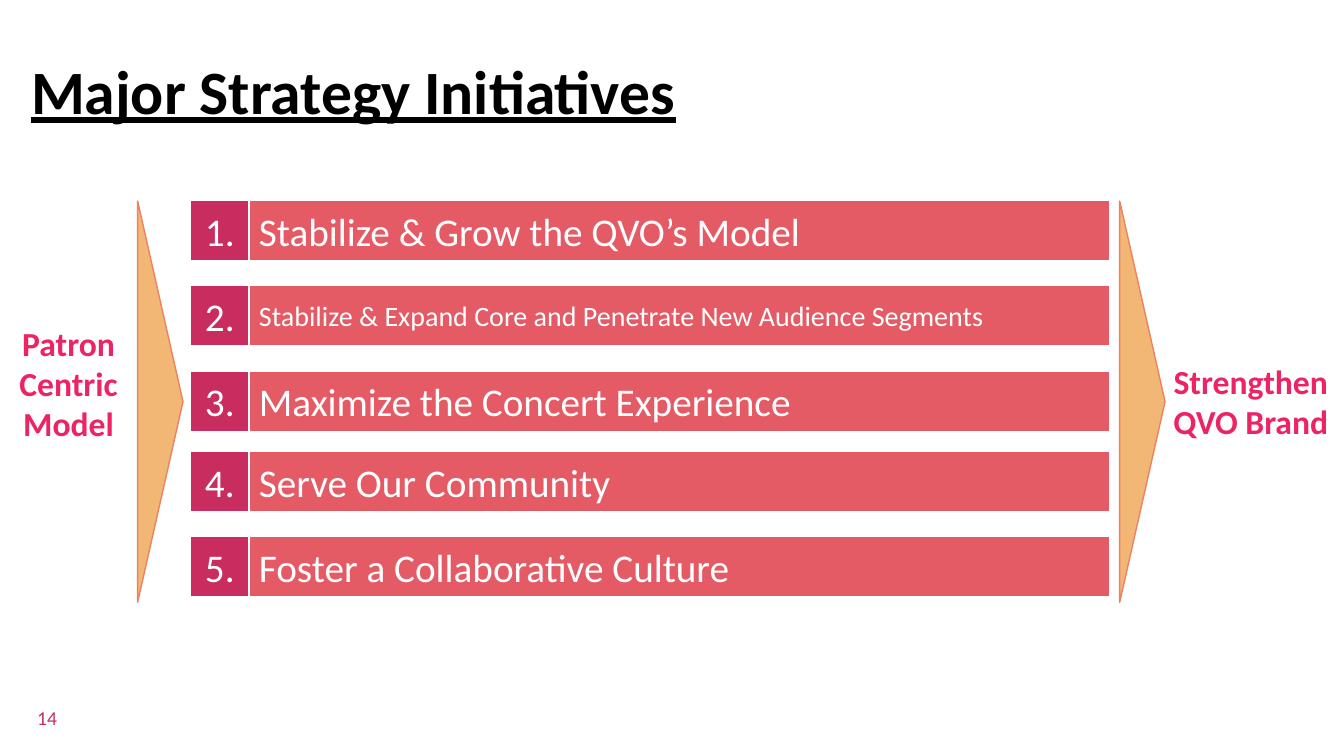
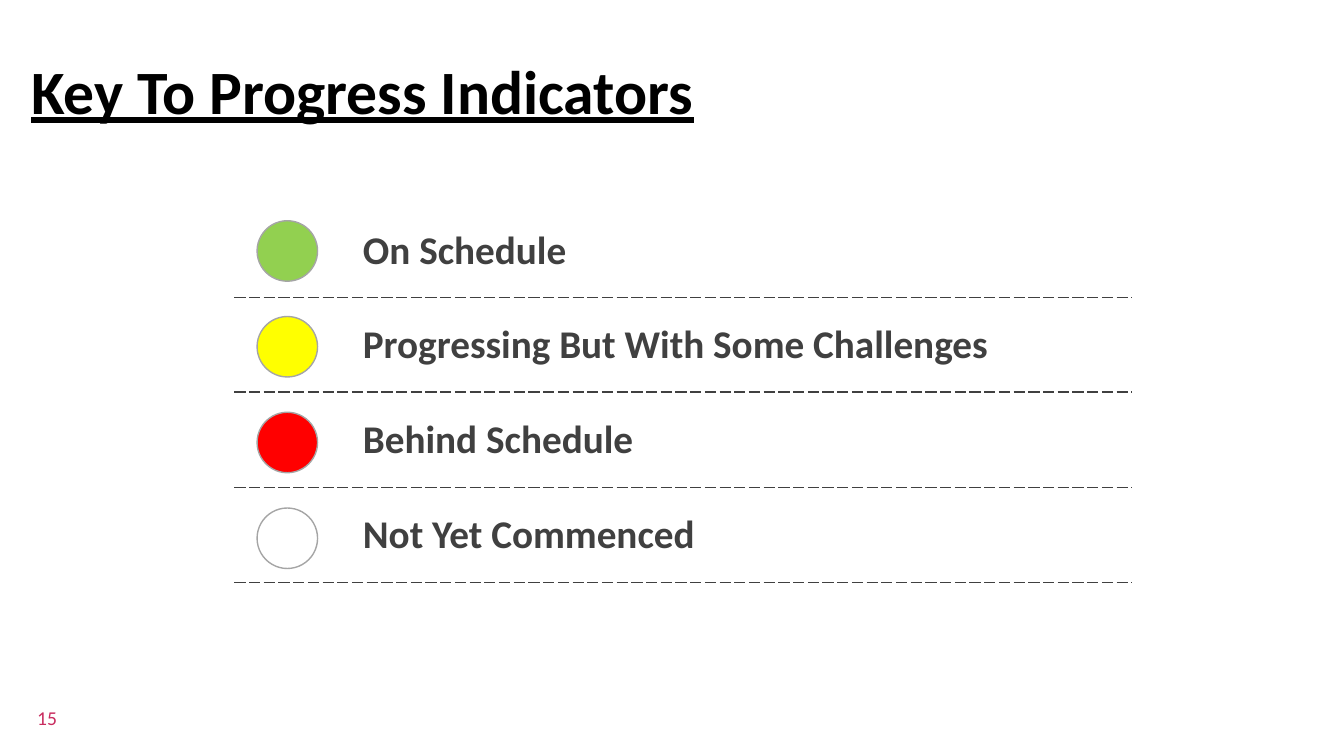
from lxml import etree
from pptx import Presentation
from pptx import util as u
from pptx.dml.color import RGBColor
from pptx.enum import shapes, text
from pptx.oxml.ns import qn

PX = 9144
FONT = "Calibri"

BLACK = RGBColor(0x00, 0x00, 0x00)
WHITE = RGBColor(0xFF, 0xFF, 0xFF)
CHARCOAL = RGBColor(0x40, 0x40, 0x40)
GREY = RGBColor(0xA5, 0xA5, 0xA5)
CRIMSON = RGBColor(0xC9, 0x2C, 0x5F)
CORAL = RGBColor(0xE4, 0x5B, 0x66)
PINK = RGBColor(0xEC, 0x24, 0x63)
SAND = RGBColor(0xF3, 0xB7, 0x75)
ORANGE = RGBColor(0xEE, 0x81, 0x60)
GREEN = RGBColor(0x92, 0xD0, 0x50)
YELLOW = RGBColor(0xFF, 0xFF, 0x00)
RED = RGBColor(0xFF, 0x00, 0x00)

INITIATIVES = [
    (199, "Stabilize & Grow the QVO’s Model", 28),
    (283, "Stabilize & Expand Core and Penetrate New Audience Segments", 20),
    (368, "Maximize the Concert Experience", 28),
    (448, "Serve Our Community", 28),
    (532, "Foster a Collaborative Culture", 28),
]
SIDE_LABELS = [
    ((6, 315, 124, 165), ["Patron Centric Model"], text.MSO_ANCHOR.TOP),
    ((1148, 328, 185, 140), ["Strengthen", "QVO Brand"], text.MSO_ANCHOR.MIDDLE),
]
INDICATORS = [
    ("On Schedule", GREEN),
    ("Progressing But With Some Challenges", YELLOW),
    ("Behind Schedule", RED),
    ("Not Yet Commenced", None),
]

NUMBER_LEFT, NUMBER_WIDTH = 189, 58
BAR_WIDTH, BAR_HEIGHT = 854, 60
ARROW_LENGTH, ARROW_SPAN = 45, 398
ARROW_CENTRES, ARROW_MIDDLE = (159, 1133), 398
TABLE_LEFT, TABLE_TOP = 233, 203
COLUMN_WIDTHS = (117, 772)
ROW_HEIGHTS = (92, 94, 95, 94)
CIRCLE_LEFT, CIRCLE_TOP, CIRCLE_SIZE, CIRCLE_STEP = 255, 219, 60, 95


def emu(*lengths):
    return [u.Emu(length * PX) for length in lengths]


def write(frame, lines, size, color, bold=False, underline=False,
          align=text.PP_ALIGN.LEFT, anchor=text.MSO_ANCHOR.MIDDLE, spacing=None):
    frame.text = "\n".join(lines)
    frame.word_wrap = True
    frame.vertical_anchor = anchor
    for paragraph in frame.paragraphs:
        paragraph.alignment = align
        paragraph.line_spacing = spacing
        for run in paragraph.runs:
            run.font.name = FONT
            run.font.size = u.Pt(size)
            run.font.bold = bold
            run.font.underline = underline
            run.font.color.rgb = color


def add_text(slide, box, lines, size, color, **style):
    write(slide.shapes.add_textbox(*emu(*box)).text_frame, lines, size, color, **style)


def add_shape(slide, preset, box, fill, line):
    shape = slide.shapes.add_shape(preset, *emu(*box))
    shape.shadow.inherit = False
    if fill is None:
        shape.fill.background()
    else:
        shape.fill.solid()
        shape.fill.fore_color.rgb = fill
    shape.line.color.rgb = line
    shape.line.width = u.Pt(1)
    return shape


def set_border(cell, side, color, dash):
    line = etree.SubElement(cell._tc.get_or_add_tcPr(), qn(f"a:ln{side}"), w="12700")
    fill = etree.SubElement(line, qn("a:solidFill"))
    etree.SubElement(fill, qn("a:srgbClr"), val=str(color))
    etree.SubElement(line, qn("a:prstDash"), val=dash)


def add_slide(presentation, title, number):
    slide = presentation.slides.add_slide(presentation.slide_layouts[6])
    add_text(slide, (27, 695, 300, 40), [number], 14, CRIMSON, anchor=text.MSO_ANCHOR.TOP)
    add_text(slide, (21, 21, 1150, 145), [title], 44, BLACK,
             bold=True, underline=True, spacing=0.9)
    return slide


def build_initiatives(presentation):
    slide = add_slide(presentation, "Major Strategy Initiatives", "14")
    for centre in ARROW_CENTRES:
        box = (centre - ARROW_SPAN // 2, ARROW_MIDDLE - ARROW_LENGTH // 2,
               ARROW_SPAN, ARROW_LENGTH)
        arrow = add_shape(slide, shapes.MSO_SHAPE.ISOSCELES_TRIANGLE, box, SAND, ORANGE)
        arrow.rotation = 90
    for number, (top, label, size) in enumerate(INITIATIVES, 1):
        bar = add_shape(slide, shapes.MSO_SHAPE.RECTANGLE,
                        (NUMBER_LEFT + NUMBER_WIDTH, top, BAR_WIDTH, BAR_HEIGHT), CORAL, WHITE)
        write(bar.text_frame, [label], size, WHITE)
        tile = add_shape(slide, shapes.MSO_SHAPE.RECTANGLE,
                         (NUMBER_LEFT, top, NUMBER_WIDTH, BAR_HEIGHT), CRIMSON, WHITE)
        write(tile.text_frame, [f"{number}."], 28, WHITE, align=text.PP_ALIGN.CENTER)
    for box, lines, anchor in SIDE_LABELS:
        add_text(slide, box, lines, 24, PINK, bold=True,
                 align=text.PP_ALIGN.CENTER, anchor=anchor)


def build_indicators(presentation):
    slide = add_slide(presentation, "Key To Progress Indicators", "15")
    table = slide.shapes.add_table(
        len(INDICATORS), len(COLUMN_WIDTHS),
        *emu(TABLE_LEFT, TABLE_TOP, sum(COLUMN_WIDTHS), sum(ROW_HEIGHTS))).table
    table.first_row = table.horz_banding = False
    for column, width in zip(table.columns, emu(*COLUMN_WIDTHS)):
        column.width = width
    for row, height in zip(table.rows, emu(*ROW_HEIGHTS)):
        row.height = height
    for index, (label, color) in enumerate(INDICATORS):
        top_border = (CHARCOAL, "sysDash") if index else (WHITE, "solid")
        for cell in table.rows[index].cells:
            set_border(cell, "L", WHITE, "solid")
            set_border(cell, "R", WHITE, "solid")
            set_border(cell, "T", *top_border)
            set_border(cell, "B", CHARCOAL, "sysDash")
            cell.fill.background()
        cell = table.cell(index, 1)
        write(cell.text_frame, [label], 28, CHARCOAL, bold=True)
        cell.vertical_anchor = text.MSO_ANCHOR.MIDDLE
        add_shape(slide, shapes.MSO_SHAPE.OVAL,
                  (CIRCLE_LEFT, CIRCLE_TOP + index * CIRCLE_STEP, CIRCLE_SIZE, CIRCLE_SIZE),
                  color, GREY)


def main():
    presentation = Presentation()
    presentation.slide_width, presentation.slide_height = emu(1333, 750)
    build_initiatives(presentation)
    build_indicators(presentation)
    presentation.save("out.pptx")


if __name__ == "__main__":
    main()
